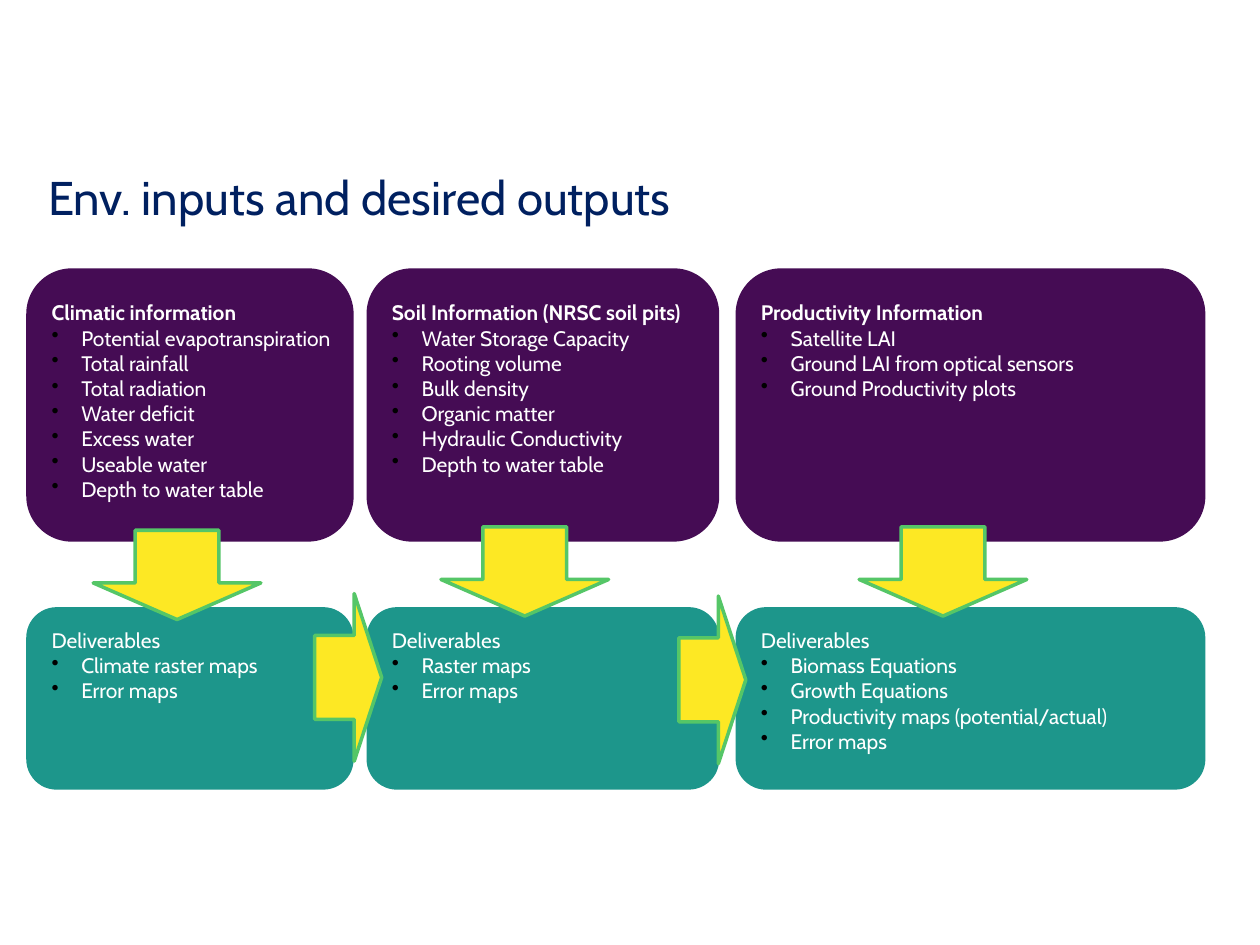
import lxml.etree
import pptx
import pptx.dml.color
import pptx.enum.shapes
import pptx.enum.text
import pptx.oxml.ns
import pptx.util
from pptx.util import Cm

RGBColor = pptx.dml.color.RGBColor
MSO_SHAPE = pptx.enum.shapes.MSO_SHAPE

NAVY = RGBColor(0x00, 0x20, 0x60)
PURPLE = RGBColor(0x45, 0x0C, 0x54)
TEAL = RGBColor(0x1D, 0x96, 0x8B)
YELLOW = RGBColor(0xFD, 0xE8, 0x24)
GREEN = RGBColor(0x55, 0xC6, 0x67)
WHITE = RGBColor(0xFF, 0xFF, 0xFF)
BLACK = RGBColor(0x00, 0x00, 0x00)

FONT = "Cabin"
LINE_POINTS = 14.4
LINES_ABOVE_DELIVERABLES = 13

INPUT_TOP, INPUT_HEIGHT = 5.41, 5.51
OUTPUT_TOP, OUTPUT_HEIGHT = 12.24, 3.68
ARROW_WIDTH, DOWN_LENGTH, ACROSS_LENGTH = 3.38, 1.8, 1.35

# left, card width, text width, heading, inputs, deliverables
COLUMNS = [
    (0.53, 6.6, 6.6, "Climatic information",
     ["Potential evapotranspiration", "Total rainfall", "Total radiation",
      "Water deficit", "Excess water", "Useable water", "Depth to water table"],
     ["Climate raster maps", "Error maps"]),
    (7.39, 7.11, 7.11, "Soil Information (NRSC soil pits)",
     ["Water Storage Capacity", "Rooting volume", "Bulk density",
      "Organic matter", "Hydraulic Conductivity", "Depth to water table"],
     ["Raster maps", "Error maps"]),
    (14.83, 9.47, 7.6, "Productivity Information",
     ["Satellite LAI", "Ground LAI from optical sensors",
      "Ground Productivity plots"],
     ["Biomass Equations", "Growth Equations",
      "Productivity maps (potential/actual)", "Error maps"]),
]
DOWN_ARROWS = [(1.88, 10.69), (8.89, 10.62), (17.32, 10.62)]
ACROSS_ARROWS = [(5.33, 12.98), (12.67, 13.03)]


def add_title(slide, left, top, width, height):
    """Place and format the title placeholder."""
    title = slide.shapes.title
    title.left, title.top = Cm(left), Cm(top)
    title.width, title.height = Cm(width), Cm(height)
    frame = title.text_frame
    frame.text = "Env. inputs and desired outputs"
    frame.vertical_anchor = pptx.enum.text.MSO_ANCHOR.MIDDLE
    frame.margin_left = frame.margin_right = 0
    frame.margin_top = frame.margin_bottom = 0
    paragraph = frame.paragraphs[0]
    paragraph.alignment = pptx.enum.text.PP_ALIGN.LEFT
    paragraph.line_spacing = 0.9
    set_font(paragraph, 27, NAVY)


def set_font(paragraph, size, color, bold=False):
    """Set the font of a whole paragraph."""
    paragraph.font.name = FONT
    paragraph.font.size = pptx.util.Pt(size)
    paragraph.font.bold = bold
    paragraph.font.color.rgb = color


def add_bullet(paragraph):
    """Give a paragraph a hanging black bullet."""
    properties = paragraph._p.get_or_add_pPr()
    properties.set("marL", str(Cm(0.6)))
    properties.set("indent", str(-Cm(0.6)))
    qn = pptx.oxml.ns.qn
    color = lxml.etree.SubElement(properties, qn("a:buClr"))
    lxml.etree.SubElement(color, qn("a:srgbClr"), val=str(BLACK))
    lxml.etree.SubElement(properties, qn("a:buChar"), char="•")


def add_card(slide, left, top, width, height, color):
    """Add a plain rounded card."""
    card = slide.shapes.add_shape(
        MSO_SHAPE.ROUNDED_RECTANGLE, Cm(left), Cm(top), Cm(width), Cm(height))
    card.shadow.inherit = False
    card.fill.solid()
    card.fill.fore_color.rgb = color
    card.line.fill.background()


def add_column_text(slide, left, top, width, heading, inputs, deliverables):
    """Write the inputs and, level with the lower card, the deliverables."""
    line_count = LINES_ABOVE_DELIVERABLES + 1 + len(deliverables)
    height = pptx.util.Pt(line_count * LINE_POINTS) + Cm(0.25)
    box = slide.shapes.add_textbox(Cm(left), Cm(top), Cm(width), height)
    frame = box.text_frame
    frame.word_wrap = True
    frame.auto_size = pptx.enum.text.MSO_AUTO_SIZE.SHAPE_TO_FIT_TEXT
    frame.text = "\n".join([heading, *inputs, "Deliverables", *deliverables])
    deliverables_index = len(inputs) + 1
    for index, paragraph in enumerate(frame.paragraphs):
        if index == deliverables_index:
            gap = LINES_ABOVE_DELIVERABLES - deliverables_index
            paragraph.space_before = pptx.util.Pt(gap * LINE_POINTS)
        elif index > 0:
            add_bullet(paragraph)
        set_font(paragraph, 12, WHITE, bold=index == 0)


def add_arrow(slide, left, top, length, rotation=0):
    """Add a block arrow that points down before rotation."""
    arrow = slide.shapes.add_shape(
        MSO_SHAPE.DOWN_ARROW, Cm(left), Cm(top), Cm(ARROW_WIDTH), Cm(length))
    arrow.adjustments[1] = 0.41
    arrow.rotation = rotation
    arrow.shadow.inherit = False
    arrow.fill.solid()
    arrow.fill.fore_color.rgb = YELLOW
    arrow.line.color.rgb = GREEN
    arrow.line.width = pptx.util.Pt(2)


def main():
    """Build the slide and save it."""
    presentation = pptx.Presentation()
    presentation.slide_width, presentation.slide_height = Cm(25.4), Cm(19.05)
    slide = presentation.slides.add_slide(presentation.slide_layouts[5])
    for top, height, color in ((OUTPUT_TOP, OUTPUT_HEIGHT, TEAL),
                               (INPUT_TOP, INPUT_HEIGHT, PURPLE)):
        for left, width, *_ in COLUMNS:
            add_card(slide, left, top, width, height, color)
    add_title(slide, 0.97, 2.95, 21.89, 2.18)
    for left, _, text_width, *content in COLUMNS:
        add_column_text(slide, left + 0.26, INPUT_TOP + 0.51, text_width, *content)
    for left, top in DOWN_ARROWS:
        add_arrow(slide, left, top, DOWN_LENGTH)
    for left, top in ACROSS_ARROWS:
        add_arrow(slide, left, top, ACROSS_LENGTH, rotation=270)
    presentation.save("out.pptx")


if __name__ == "__main__":
    main()
